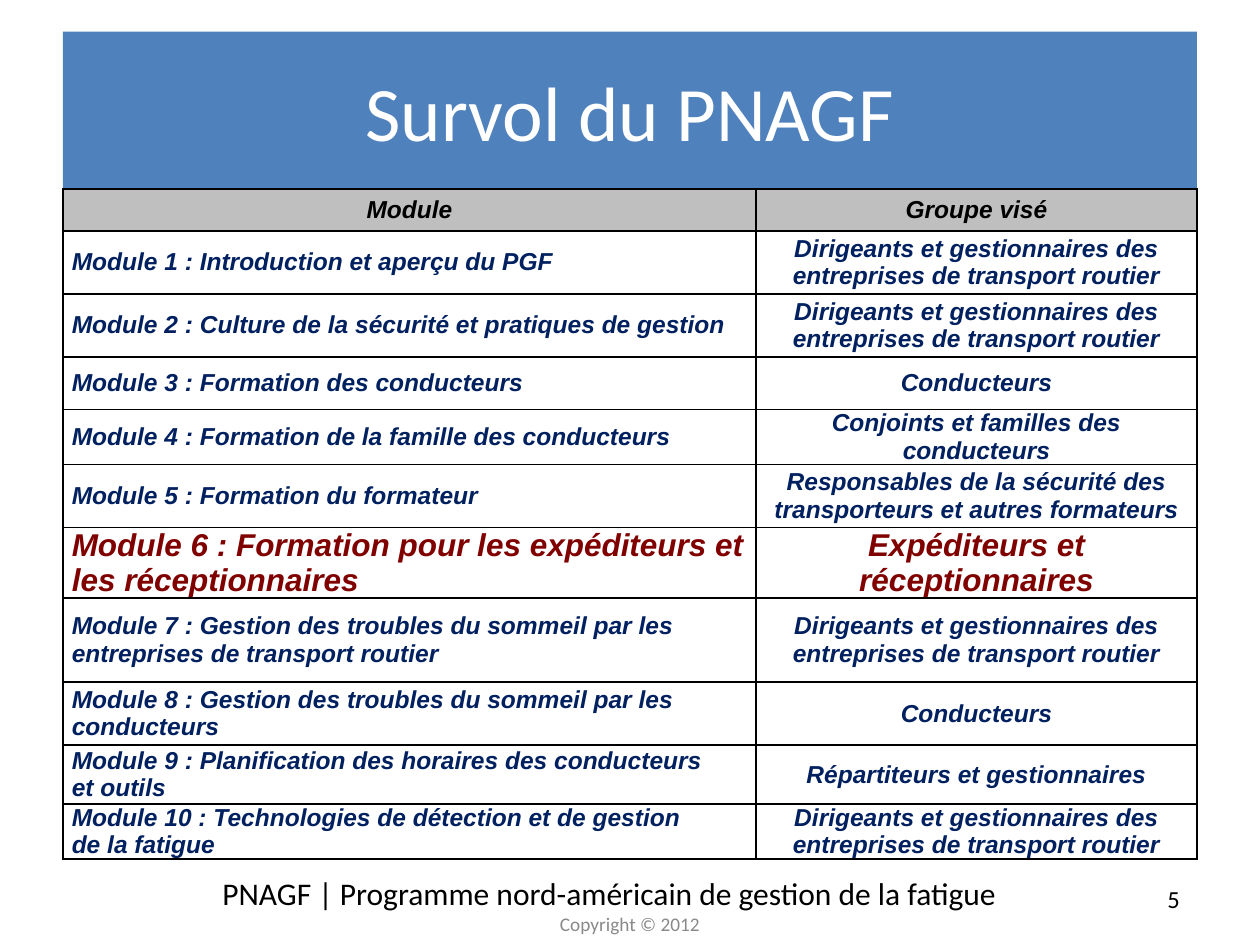
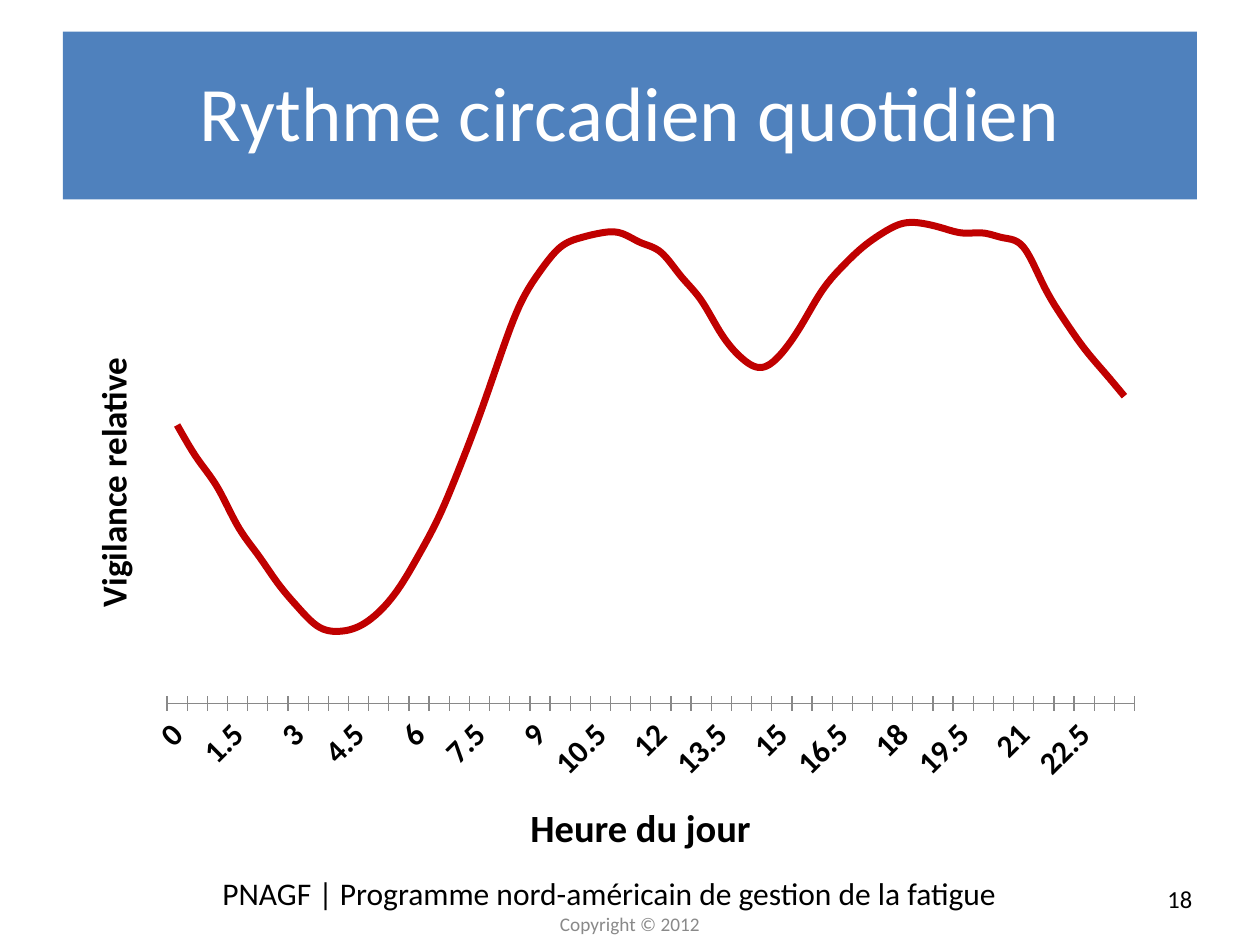
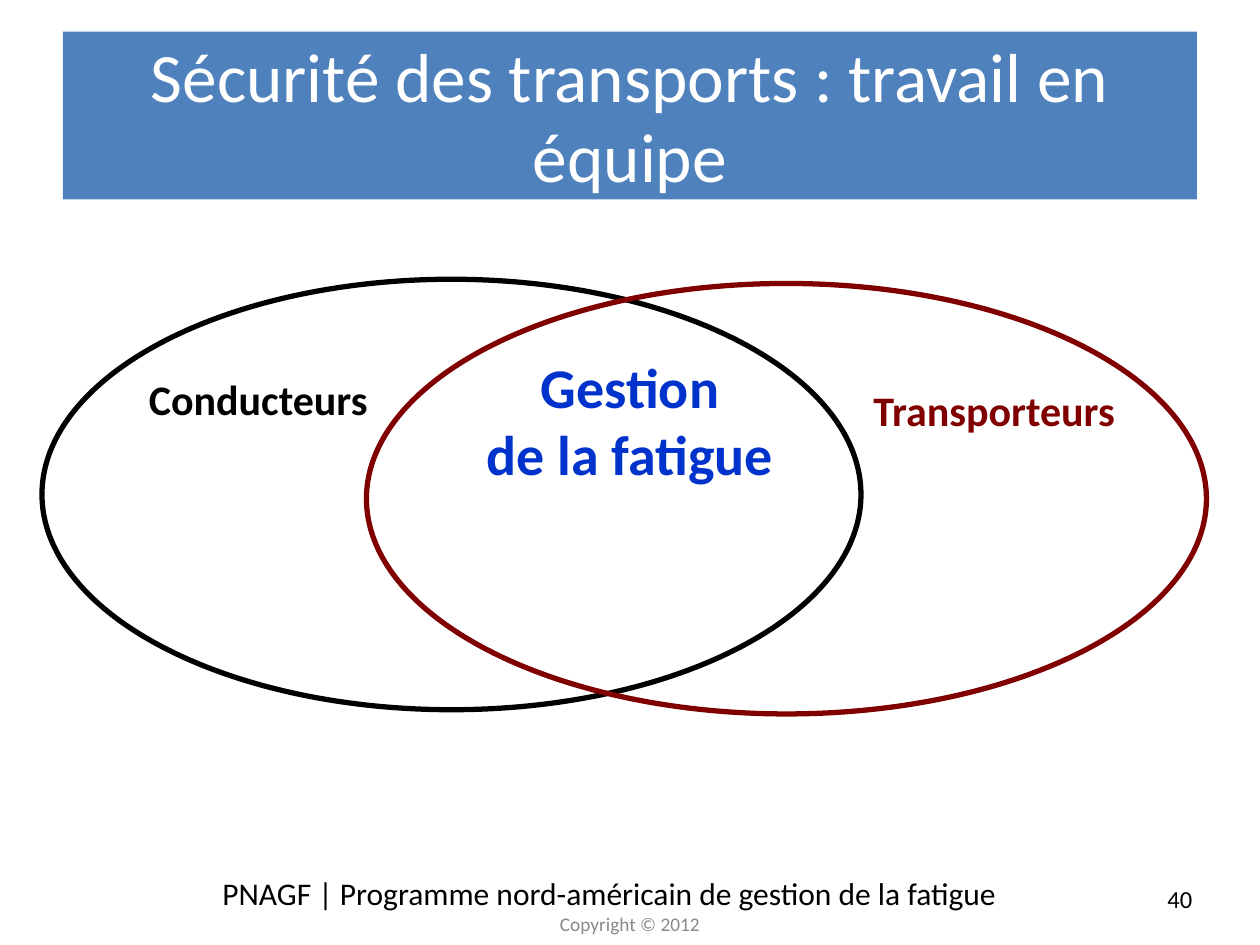
from dataclasses import dataclass

from pptx import Presentation
from pptx import util as u
from pptx.chart import data as chart_data
from pptx.dml import color
from pptx.enum import chart as charts, shapes, text
from pptx.oxml import parse_xml
from pptx.oxml.ns import nsdecls, qn

COLUMNS, ROWS = 120, 90
CELL = u.Inches(10) // COLUMNS
BLUE, WHITE, BLACK, GREY = "4F81BD", "FFFFFF", "000000", "898989"
NAVY, MAROON, RED, HEADER_GREY, ROYAL = "002060", "800000", "C00000", "BFBFBF", "0033CC"
LEFT, CENTER = text.PP_ALIGN.LEFT, text.PP_ALIGN.CENTER
MIDDLE, TOP = text.MSO_ANCHOR.MIDDLE, text.MSO_ANCHOR.TOP
FIT_SHAPE, NO_FIT = text.MSO_AUTO_SIZE.SHAPE_TO_FIT_TEXT, text.MSO_AUTO_SIZE.NONE

MANAGERS = "Dirigeants et gestionnaires des entreprises de transport routier"
MODULES = [
    (4, "Module", "Groupe visé"),
    (6, "Module 1 : Introduction et aperçu du PGF", MANAGERS),
    (6, "Module 2 : Culture de la sécurité et pratiques de gestion", MANAGERS),
    (5, "Module 3 : Formation des conducteurs", "Conducteurs"),
    (5, "Module 4 : Formation de la famille des conducteurs",
     "Conjoints et familles des conducteurs"),
    (6, "Module 5 : Formation du formateur",
     "Responsables de la sécurité des transporteurs et autres formateurs"),
    (5.6, "Module 6 : Formation pour les expéditeurs et les réceptionnaires",
     "Expéditeurs et réceptionnaires"),
    (8, "Module 7 : Gestion des troubles du sommeil par les entreprises de transport routier",
     MANAGERS),
    (6, "Module 8 : Gestion des troubles du sommeil par les conducteurs", "Conducteurs"),
    (5.6, "Module 9 : Planification des horaires des conducteurs\net outils",
     "Répartiteurs et gestionnaires"),
    (4.6, "Module 10 : Technologies de détection et de gestion\vde la fatigue", MANAGERS),
]
HIGHLIGHTED_MODULE = 6
ALERTNESS = [
    58, 51, 45, 37, 31, 25, 20, 16, 15, 16, 19, 24, 31, 39, 49, 60,
    72, 83, 90, 95, 97, 98, 98, 96, 94, 89, 84, 77, 72, 70, 73, 79,
    86, 91, 95, 98, 100, 100, 99, 98, 98, 97, 95, 87, 80, 74, 69, 64,
]


@dataclass
class Box:
    """A region measured in grid columns and rows."""
    column: float
    row: float
    width: float
    height: float

    def region(self, column, row, width, height):
        """Return a region placed from this one's top left corner."""
        return Box(self.column + column, self.row + row, width, height)

    def lengths(self):
        """Return left, top, width and height as slide lengths."""
        return [u.Emu(round(n * CELL)) for n in (self.column, self.row, self.width, self.height)]


SLIDE = Box(0, 0, COLUMNS, ROWS)
BODY = SLIDE.region(0, 16, COLUMNS, 67)


def rgb(value):
    """Turn a hex string into a colour."""
    return color.RGBColor.from_string(value)


def assign(target, **values):
    """Set each named attribute on the target."""
    for name, value in values.items():
        setattr(target, name, value)


def format_font(font, size, hue=BLACK, name="Calibri", **values):
    """Give a font its size, colour, face and other attributes."""
    assign(font, size=u.Pt(size), name=name, **values)
    font.color.rgb = rgb(hue)


def format_text(frame, align, size, hue, **values):
    """Align every paragraph of a frame and format its runs."""
    for para in frame.paragraphs:
        para.alignment = align
        for span in para.runs:
            format_font(span.font, size, hue, **values)


def add_text(page, box, words, size, hue=BLACK, align=LEFT, bold=False,
             anchor=TOP, fit=FIT_SHAPE, wrap=True):
    """Add a text box and return its shape."""
    label = page.shapes.add_textbox(*box.lengths())
    frame = label.text_frame
    assign(frame, text=words, word_wrap=wrap, auto_size=fit, vertical_anchor=anchor)
    format_text(frame, align, size, hue, bold=bold)
    return label


def add_preset(page, kind, box, fill=None, line=None, weight=3):
    """Add a preset shape with an optional fill and outline."""
    shape = page.shapes.add_shape(kind, *box.lengths())
    shape.shadow.inherit = False
    for paint, hue in ((shape.fill, fill), (shape.line.fill, line)):
        if hue:
            paint.solid()
            paint.fore_color.rgb = rgb(hue)
        else:
            paint.background()
    if line:
        shape.line.width = u.Pt(weight)
    return shape


def share_frame(page, box):
    """Build the band and footer and hand them to the page's layout."""
    band = add_preset(page, shapes.MSO_SHAPE.RECTANGLE, box.region(6, 3, 108, 16), BLUE)
    footer = add_text(page, box.region(20, 85.1, 80, 4.5),
                      "PNAGF | Programme nord-américain de gestion de la fatigue\nCopyright © 2012",
                      18, anchor=MIDDLE, fit=NO_FIT)
    footer.text_frame.margin_bottom = u.Inches(0.25)
    copyright_line = footer.text_frame.paragraphs[1]
    copyright_line.alignment = CENTER
    format_font(copyright_line.runs[0].font, 11, GREY)
    for shape in (band, footer):
        page.slide_layout.shapes.element.append(shape.element)


def start_page(deck, box, title, number, size=44):
    """Add a page with its title and page number."""
    page = deck.slides.add_slide(deck.slide_layouts[5])
    heading = page.shapes.title
    left, top, width, height = box.region(6, 3.6, 108, 15).lengths()
    assign(heading, left=left, top=top, width=width, height=height)
    frame = heading.text_frame
    assign(frame, text=title, auto_size=NO_FIT, vertical_anchor=MIDDLE, word_wrap=True)
    format_text(frame, CENTER, size, WHITE)
    frame.paragraphs[0].line_spacing = u.Pt(45.8)
    add_text(page, box.region(110, 83.2, 6.4, 4.8), number, 14, anchor=MIDDLE, fit=NO_FIT)
    return page


def outline_cell(cell):
    """Draw a thin black border on all four sides of a cell."""
    properties = cell._tc.get_or_add_tcPr()
    for side in "LRTB":
        properties.append(parse_xml(
            f'<a:ln{side} {nsdecls("a")} w="{u.Pt(1)}"><a:solidFill>'
            f'<a:srgbClr val="{BLACK}"/></a:solidFill></a:ln{side}>'))


def add_module_table(page, box):
    """Add the table of modules and their target groups."""
    table = page.shapes.add_table(len(MODULES), 2, *box.region(6, 2, 108, 65).lengths()).table
    assign(table, first_row=False, horz_banding=False)
    for column, width in zip(table.columns, (66, 42)):
        column.width = width * CELL
    for index, (height, *words) in enumerate(MODULES):
        table.rows[index].height = round(height * CELL)
        size, hue = (18, MAROON) if index == HIGHLIGHTED_MODULE else (14, NAVY if index else BLACK)
        for column, content in enumerate(words):
            cell = table.cell(index, column)
            assign(cell, text=content, vertical_anchor=MIDDLE, margin_top=0, margin_bottom=0,
                   margin_left=u.Inches(0.07), margin_right=u.Inches(0.07))
            align = LEFT if index and column == 0 else CENTER
            format_text(cell.text_frame, align, size, hue, name="Arial", bold=True, italic=True)
            outline_cell(cell)
            if index:
                cell.fill.background()
            else:
                cell.fill.solid()
                cell.fill.fore_color.rgb = rgb(HEADER_GREY)


def fix_plot_layout(chart, x, y, w, h):
    """Place the inner plot area by shares of the chart."""
    area = chart.element.find(".//" + qn("c:plotArea"))
    for layout in area.findall(qn("c:layout")):
        area.remove(layout)
    sizes = "".join(f'<c:{key} val="{share}"/>' for key, share in zip("xywh", (x, y, w, h)))
    area.insert(0, parse_xml(
        f'<c:layout {nsdecls("c")}><c:manualLayout><c:layoutTarget val="inner"/>'
        f'<c:xMode val="edge"/><c:yMode val="edge"/>{sizes}</c:manualLayout></c:layout>'))


def format_hours(axis):
    """Style the hour axis with slanted labels on every third point."""
    assign(axis, has_major_gridlines=False, major_tick_mark=charts.XL_TICK_MARK.CROSS)
    axis.format.line.color.rgb = rgb(GREY)
    format_font(axis.tick_labels.font, 18, bold=True)
    element = axis._element
    element.find(qn("c:txPr")).find(qn("a:bodyPr")).set("rot", "-2700000")
    element.find(qn("c:noMultiLvlLbl")).addprevious(
        parse_xml(f'<c:tickLblSkip {nsdecls("c")} val="3"/>'))


def add_alertness_chart(page, box):
    """Add the alertness curve and its two axis labels."""
    figures = chart_data.CategoryChartData(number_format="0")
    figures.categories = [f"{half / 2:g}" for half in range(len(ALERTNESS))]
    figures.add_series("Series 1", ALERTNESS)
    chart = page.shapes.add_chart(charts.XL_CHART_TYPE.LINE,
                                  *box.region(13, 0, 97, 60).lengths(), figures).chart
    assign(chart, has_legend=False, has_title=False)
    format_font(chart.font, 10)
    chart.plots[0].vary_by_categories = False
    curve = chart.plots[0].series[0]
    curve.smooth = True
    curve.marker.style = charts.XL_MARKER_STYLE.NONE
    curve.format.line.width = u.Pt(4)
    curve.format.line.color.rgb = rgb(RED)
    assign(chart.value_axis, visible=False, has_major_gridlines=False,
           minimum_scale=0, maximum_scale=105)
    format_hours(chart.category_axis)
    fix_plot_layout(chart, 0.03, 0.05, 0.95, 0.8)
    vertical = add_text(page, box.region(-11.4, 25.5, 48, 8.9), "Vigilance relative",
                        20, align=CENTER, bold=True)
    vertical.rotation = 270
    add_text(page, box.region(14, 60, 94, 5.6), "Heure du jour", 22, align=CENTER, bold=True)


def add_team_diagram(page, box):
    """Add two overlapping ellipses and their labels."""
    for place, hue in ((box.region(4, 10.6, 78, 41), BLACK),
                       (box.region(34.9, 11, 80, 41), MAROON)):
        add_preset(page, shapes.MSO_SHAPE.OVAL, place, line=hue)
    add_text(page, box.region(13, 19, 23.5, 6), "Conducteurs", 24, bold=True, wrap=False)
    add_text(page, box.region(82, 20, 26, 6), "Transporteurs", 24, MAROON, bold=True)
    add_text(page, box.region(45, 17, 30, 14.2), "Gestion\nde la fatigue", 32, ROYAL,
             CENTER, bold=True, wrap=False)


def main():
    """Build the three pages and save the deck."""
    deck = Presentation()
    assign(deck, slide_width=COLUMNS * CELL, slide_height=ROWS * CELL)
    overview = start_page(deck, SLIDE, "Survol du PNAGF", "5")
    share_frame(overview, SLIDE)
    add_module_table(overview, BODY)
    rhythm = start_page(deck, SLIDE, "Rythme circadien quotidien", "18")
    add_alertness_chart(rhythm, BODY)
    teamwork = start_page(deck, SLIDE, "Sécurité des transports : travail en équipe", "40", 39.6)
    add_team_diagram(teamwork, BODY)
    deck.save("out.pptx")


if __name__ == "__main__":
    main()
